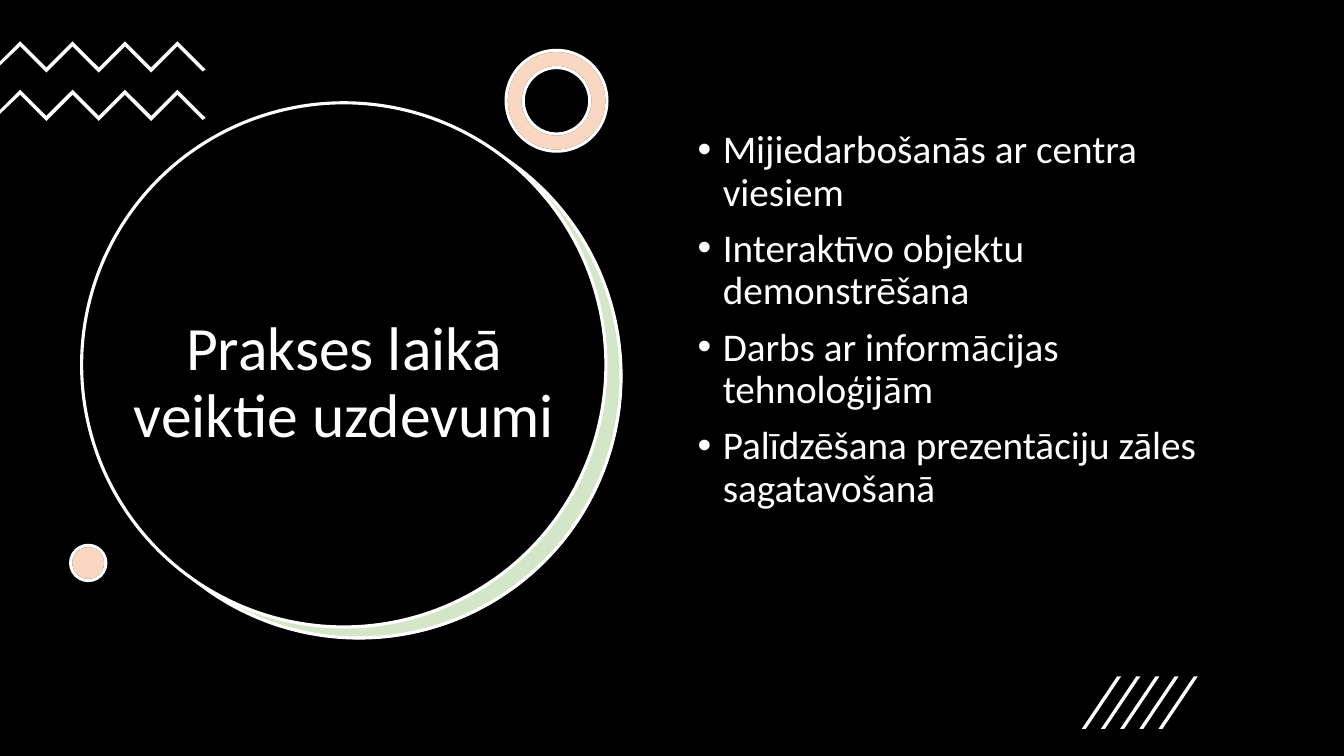
from lxml import etree
from pptx import Presentation
from pptx.dml.color import RGBColor
from pptx.enum.shapes import MSO_SHAPE
from pptx.enum.text import MSO_ANCHOR, MSO_AUTO_SIZE, PP_ALIGN
from pptx.oxml.ns import qn
from pptx.util import Pt

PX = 9144  # 100 px to the inch
WIDTH, HEIGHT = 1333, 750
TITLE_ONLY = 5

BLACK = RGBColor(0x00, 0x00, 0x00)
WHITE = RGBColor(0xFF, 0xFF, 0xFF)
GREEN = RGBColor(0x70, 0xAD, 0x47)
ORANGE = RGBColor(0xED, 0x7D, 0x31)

RECTANGLE, OVAL, DONUT = MSO_SHAPE.RECTANGLE, MSO_SHAPE.OVAL, MSO_SHAPE.DONUT
TOP, MIDDLE = MSO_ANCHOR.TOP, MSO_ANCHOR.MIDDLE
LEFT, CENTER = PP_ALIGN.LEFT, PP_ALIGN.CENTER
NO_AUTOFIT = MSO_AUTO_SIZE.NONE

TASKS = [
    "Mijiedarbošanās ar centra viesiem",
    "Interaktīvo objektu demonstrēšana",
    "Darbs ar informācijas tehnoloģijām",
    "Palīdzēšana prezentāciju zāles sagatavošanā",
]


class SlideBuilder:
    font_name = "Calibri"
    line_width = Pt(2.25)

    def __init__(self, slide):
        self.slide = slide
        self.shapes = slide.shapes

    @staticmethod
    def apply(target, values):
        for name, value in values.items():
            setattr(target, name, value)

    def paint(self, shape, fill, line=None, opacity=None):
        shape.shadow.inherit = False
        shape.fill.solid()
        shape.fill.fore_color.rgb = fill
        if opacity:
            color = shape.element.spPr.find(qn("a:solidFill")).find(qn("a:srgbClr"))
            etree.SubElement(color, qn("a:alpha"), val=str(opacity * 1000))
        if line is None:
            shape.line.fill.background()
        else:
            shape.line.color.rgb = line
            shape.line.width = self.line_width

    def shape(self, kind, box, fill, line=None, opacity=None, adjust=None):
        shape = self.shapes.add_shape(kind, *(n * PX for n in box))
        if adjust:
            shape.adjustments[0] = adjust
        self.paint(shape, fill, line, opacity)

    def outlines(self, point_lists, fill):
        """Draw closed outlines and group them."""
        members = []
        for points in point_lists:
            builder = self.shapes.build_freeform(*points[0], scale=PX)
            builder.add_line_segments(points[1:], close=True)
            members.append(builder.convert_to_shape())
            self.paint(members[-1], fill)
        self.shapes.add_group_shape(members)

    def fill_text(self, frame, texts, size, anchor, align, bulleted=False):
        self.apply(frame, {"word_wrap": True, "auto_size": NO_AUTOFIT,
                           "vertical_anchor": anchor})
        for index, text in enumerate(texts):
            paragraph = frame.add_paragraph() if index else frame.paragraphs[0]
            paragraph.text = text
            if bulleted:
                self.bullet(paragraph)
            self.apply(paragraph, {"alignment": align, "line_spacing": 0.9,
                                   "space_before": Pt(10 if index else 0)})
            self.apply(paragraph.runs[0].font, {"name": self.font_name, "size": Pt(size)})
            paragraph.runs[0].font.color.rgb = WHITE

    def bullet(self, paragraph):
        properties = paragraph._p.get_or_add_pPr()
        properties.set("marL", str(25 * PX))
        properties.set("indent", str(-25 * PX))
        etree.SubElement(properties, qn("a:buFont"), typeface="Arial")
        etree.SubElement(properties, qn("a:buChar"), char="•")

    def title(self, text, box, size):
        title = self.shapes.title
        title.element.getparent().append(title.element)  # above the circles
        self.apply(title, dict(zip(("left", "top", "width", "height"),
                                   (n * PX for n in box))))
        self.fill_text(title.text_frame, [text], size, MIDDLE, CENTER)

    def bullets(self, texts, box, size):
        text_box = self.shapes.add_textbox(*(n * PX for n in box))
        self.fill_text(text_box.text_frame, texts, size, TOP, LEFT, bulleted=True)


def zigzag(top):
    """A band of teeth running in from the left edge."""
    xs = range(20, 177, 26)
    upper = [(x, top + 26 * (i % 2)) for i, x in enumerate(xs)]
    lower = [(x, y + 5) for x, y in reversed(upper)]
    return (upper + [(204, top + 28), (201, top + 30)] + lower
            + [(0, top + 24), (0, top + 20)])


def slash(left):
    return [(left + 4, 723), (left, 723), (left + 35, 671), (left + 39, 671)]


def main():
    presentation = Presentation()
    presentation.slide_width = WIDTH * PX
    presentation.slide_height = HEIGHT * PX
    slide = presentation.slides.add_slide(presentation.slide_layouts[TITLE_ONLY])
    page = SlideBuilder(slide)

    # Black backdrop and large title circle with a green crescent
    page.shape(RECTANGLE, (0, 0, WIDTH, HEIGHT), BLACK)
    page.shape(OVAL, (97, 114, 520, 520), WHITE)
    page.shape(OVAL, (96, 113, 520, 520), GREEN, WHITE, opacity=30)
    page.shape(OVAL, (81, 102, 520, 520), BLACK, WHITE)
    page.title("Prakses laikā veiktie uzdevumi", (121, 205, 441, 352), 44)

    # Zigzags at the top left
    page.outlines([zigzag(top) for top in (41, 89)], WHITE)

    # Orange ring and dot, each tinted over a white base
    for kind, box, adjust in ((DONUT, (502, 50, 100, 100), 0.17),
                              (OVAL, (70, 541, 35, 35), None)):
        page.shape(kind, box, WHITE, BLACK, adjust=adjust)
        page.shape(kind, box, ORANGE, WHITE, opacity=30, adjust=adjust)

    # Task list
    page.bullets(TASKS, (682, 124, 571, 476), 28)

    # Slashes at the bottom right
    page.outlines([slash(1073 + 19 * i) for i in range(5)], WHITE)

    presentation.save("out.pptx")


if __name__ == "__main__":
    main()
